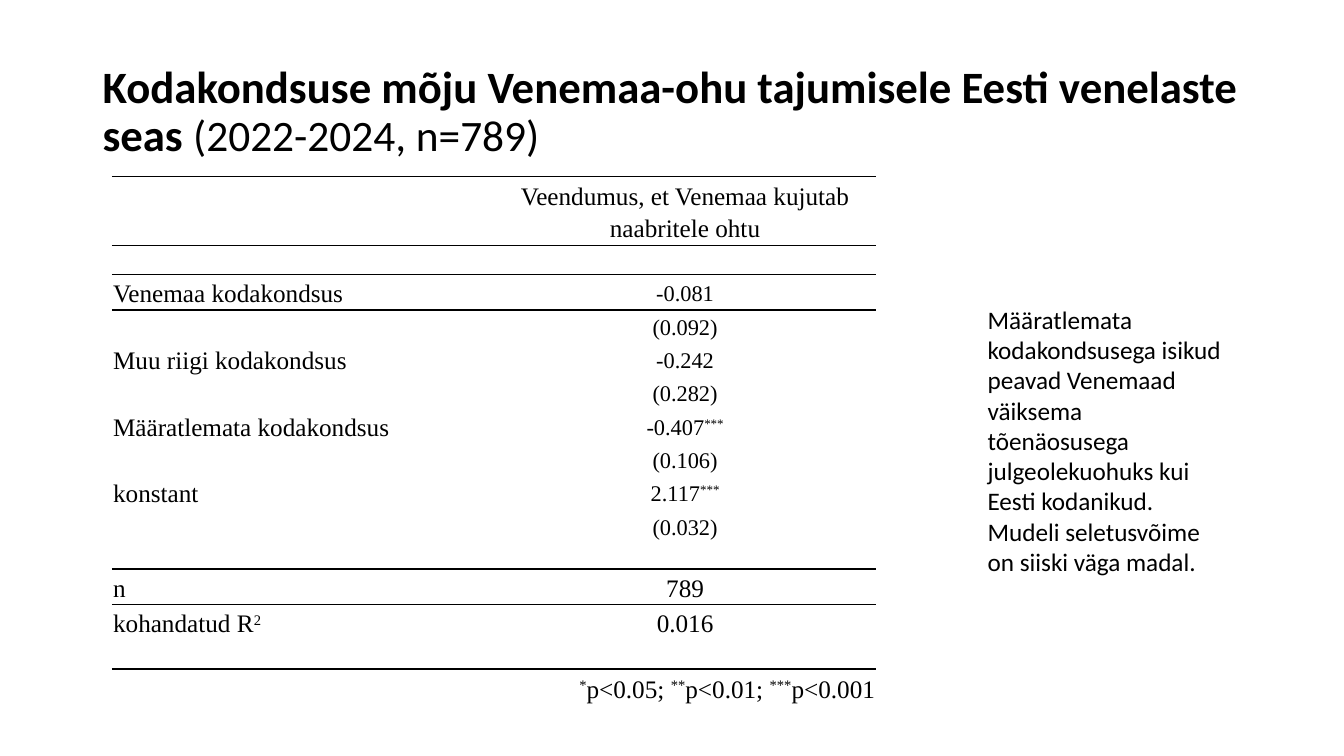
from lxml.etree import SubElement
from pptx import Presentation
from pptx.dml.color import RGBColor
from pptx.enum.text import MSO_ANCHOR, MSO_AUTO_SIZE, PP_ALIGN
from pptx.oxml.ns import qn
from pptx.util import Cm, Pt

BLACK = RGBColor(0, 0, 0)
SANS, SERIF = "Calibri", "Times New Roman"
PLAIN = "{2D5ABB26-0587-4C30-8999-92F81FD0307C}"  # table style without grid

TITLE = [
    ("Kodakondsuse mõju Venemaa-ohu tajumisele Eesti venelaste seas ",
     {"size": Pt(32), "bold": True}),
    ("(2022-2024, n=789)", {"size": Pt(31), "bold": False}),
]
NOTE = ("Määratlemata kodakondsusega isikud peavad Venemaad väiksema "
        "tõenäosusega julgeolekuohuks kui Eesti kodanikud. "
        "Mudeli seletusvõime on siiski väga madal.")

# label, value, value size, row height in cm; ^ encloses superscript
# a row without label and value is a gap with a rule below it
ROWS = [
    ("", "", 18, 0.79),
    ("", "Veendumus, et Venemaa kujutab naabritele ohtu", 18, 1.73),
    ("", "", 18, 0.74),
    ("Venemaa kodakondsus", "-0.081", 16, 0.89),
    ("", "(0.092)", 16, 0.79),
    ("Muu riigi kodakondsus", "-0.242", 16, 0.89),
    ("", "(0.282)", 16, 0.79),
    ("Määratlemata kodakondsus", "-0.407^***^", 16, 0.89),
    ("", "(0.106)", 16, 0.79),
    ("konstant", "2.117^***^", 16, 0.89),
    ("", "(0.032)", 16, 0.79),
    ("", "", 18, 0.7),
    ("n", "789", 18, 0.89),
    ("kohandatud R^2^", "0.016", 18, 0.89),
    ("", "", 18, 0.74),
    ("", "^*^p<0.05; ^**^p<0.01; ^***^p<0.001", 18, 0.95),
]


def style(item, **values):
    for name, value in values.items():
        setattr(item, name, value)


def add_run(para, text, face, **values):
    run = para.add_run()
    run.text = text
    style(run.font, name=face, **values)
    run.font.color.rgb = BLACK
    return run


def rule(cell, side):
    """Draw a thin black line on one side (lnT or lnB) of the cell."""
    line = SubElement(cell._tc.get_or_add_tcPr(), qn("a:" + side), w="12700")
    fill = SubElement(line, qn("a:solidFill"))
    SubElement(fill, qn("a:srgbClr"), val=str(BLACK))


def write(cell, text, size, align):
    style(cell, margin_left=Cm(0.03), margin_right=Cm(0.03),
          margin_top=Cm(0.03), margin_bottom=Cm(0.03),
          vertical_anchor=MSO_ANCHOR.MIDDLE)
    para = cell.text_frame.paragraphs[0]
    if not text:
        # keep an empty cell from stretching its row
        SubElement(para._p, qn("a:endParaRPr"), sz="800")
        return
    style(para, alignment=align, line_spacing=1.15)
    for i, part in enumerate(text.split("^")):
        if part:
            run = add_run(para, part, SERIF, size=Pt(size))
            if i % 2:
                run.font._element.set("baseline", "30000")


def add_title(slide):
    title = slide.shapes.title
    style(title, left=Cm(2.33), top=Cm(1.01), width=Cm(29.21), height=Cm(3.68))
    frame = title.text_frame
    style(frame, word_wrap=True, auto_size=MSO_AUTO_SIZE.NONE,
          vertical_anchor=MSO_ANCHOR.MIDDLE)
    para = frame.paragraphs[0]
    style(para, alignment=PP_ALIGN.LEFT, line_spacing=0.9)
    for text, look in TITLE:
        add_run(para, text, SANS, **look)


def add_model(slide):
    total = sum(row[3] for row in ROWS)
    table = slide.shapes.add_table(
        len(ROWS), 2, Cm(2.82), Cm(3.66), Cm(19.26), Cm(total)).table
    style(table, first_row=False, horz_banding=False)
    table._tbl.tblPr.find(qn("a:tableStyleId")).text = PLAIN
    gaps = [not (label or value) for label, value, *_ in ROWS]
    for i, (label, value, size, high) in enumerate(ROWS):
        table.rows[i].height = Cm(high)
        last = i == len(ROWS) - 1
        align = PP_ALIGN.RIGHT if last else PP_ALIGN.CENTER
        pair = [table.cell(i, 0), table.cell(i, 1)]
        write(pair[0], label, 18, PP_ALIGN.LEFT)
        write(pair[1], value, size, align)
        for cell in pair:
            if i and gaps[i - 1]:
                rule(cell, "lnT")
            if gaps[i]:
                rule(cell, "lnB")
            cell.fill.background()
        if gaps[i]:
            pair[0].merge(pair[1])


def add_note(slide):
    box = slide.shapes.add_textbox(Cm(24.64), Cm(7.54), Cm(6.5), Cm(7.19))
    box.text_frame.word_wrap = True
    add_run(box.text_frame.paragraphs[0], NOTE, SANS, size=Pt(18))


def main():
    deck = Presentation()
    style(deck, slide_width=Cm(33.87), slide_height=Cm(19.05))
    slide = deck.slides.add_slide(deck.slide_layouts[5])
    add_title(slide)
    add_model(slide)
    add_note(slide)
    deck.save("out.pptx")


if __name__ == "__main__":
    main()
